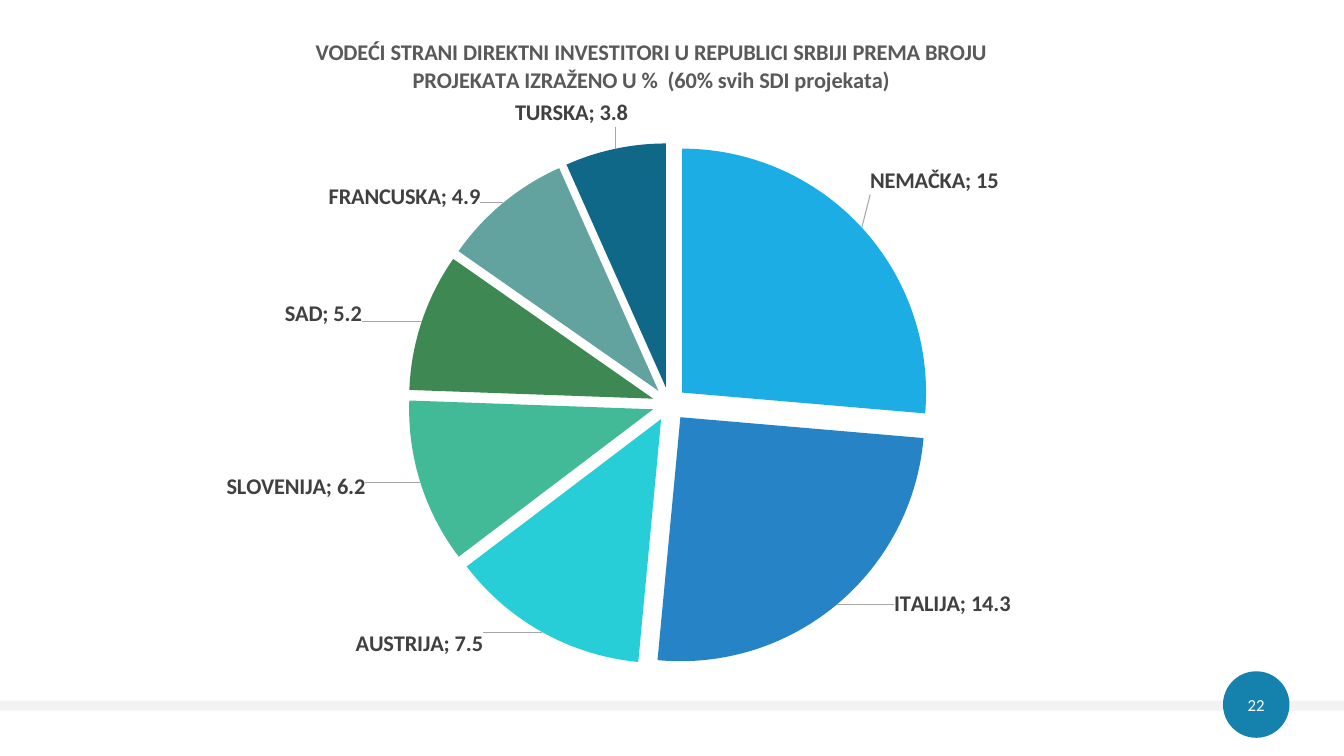
from dataclasses import dataclass

from pptx import Presentation
from pptx.chart.chart import Chart
from pptx.chart.data import CategoryChartData
from pptx.dml.color import RGBColor
from pptx.enum.chart import XL_CHART_TYPE, XL_LABEL_POSITION
from pptx.enum.shapes import MSO_SHAPE
from pptx.enum.text import MSO_ANCHOR, PP_ALIGN
from pptx.oxml import parse_xml
from pptx.oxml.ns import nsdecls, qn
from pptx.util import Inches, Pt


@dataclass(frozen=True)
class Theme:
    font: str = "Calibri"
    band: str = "F2F2F2"
    badge: str = "1482AC"
    white: str = "FFFFFF"
    title: str = "595959"
    label: str = "404040"
    leader: str = "A6A6A6"
    chart_size: int = 16
    number_size: int = 12


@dataclass(frozen=True)
class Box:
    left: float
    top: float
    width: float
    height: float

    def emu(self) -> tuple:
        return tuple(Inches(v) for v in (self.left, self.top, self.width, self.height))


@dataclass(frozen=True)
class Investor:
    """A slice; dx and dy shift its label from the rim, in inches."""
    name: str
    share: float
    color: str
    dx: float
    dy: float


THEME = Theme()
CHART = Box(1.87, 0.14, 9.18, 6.81)
PIE = Box(4.05, 1.41, 5.18, 5.2)
EXPLOSION = 7
TITLE = ("VODEĆI STRANI DIREKTNI INVESTITORI U REPUBLICI SRBIJI PREMA BROJU "
         "PROJEKATA IZRAŽENO U %  (60% svih SDI projekata)")
INVESTORS = [
    Investor("NEMAČKA", 15, "1CADE4", 0.04, -0.29),
    Investor("ITALIJA", 14.3, "2683C6", 0.53, -0.18),
    Investor("AUSTRIJA", 7.5, "27CED7", -0.56, -0.07),
    Investor("SLOVENIJA", 6.2, "42BA97", -0.49, -0.11),
    Investor("SAD", 5.2, "3E8853", -0.54, 0.08),
    Investor("FRANCUSKA", 4.9, "62A39F", -0.19, 0.12),
    Investor("TURSKA", 3.8, "106889", 0.14, -0.16),
]


def style_font(font, size: int, color: str, bold: bool = False) -> None:
    font.name, font.size, font.bold = THEME.font, Pt(size), bold
    font.color.rgb = RGBColor.from_string(color)


def add_filled(s, kind: MSO_SHAPE, box: Box, color: str):
    sp = s.shapes.add_shape(kind, *box.emu())
    sp.shadow.inherit = False
    sp.fill.solid()
    sp.fill.fore_color.rgb = RGBColor.from_string(color)
    sp.line.fill.background()
    return sp


def add_badge(s, number: str) -> None:
    sp = add_filled(s, MSO_SHAPE.OVAL, Box(12.13, 6.66, 0.66, 0.66), THEME.badge)
    tf = sp.text_frame
    tf.margin_left = tf.margin_right = tf.margin_top = tf.margin_bottom = 0
    tf.vertical_anchor = MSO_ANCHOR.MIDDLE
    p = tf.paragraphs[0]
    p.text = number
    p.alignment = PP_ALIGN.CENTER
    style_font(p.runs[0].font, THEME.number_size, THEME.white)


def chart_xml(tag: str, body: str = "", attributes: str = ""):
    return parse_xml(f"<c:{tag} {nsdecls('c', 'a')} {attributes}>{body}</c:{tag}>")


def layout_xml(settings: dict):
    items = "".join(f'<c:{name} val="{value}"/>' for name, value in settings.items())
    return chart_xml("layout", f"<c:manualLayout>{items}</c:manualLayout>")


def place_pie(chart: Chart) -> None:
    plot_area = chart._chartSpace.find(f".//{qn('c:plotArea')}")
    for old in plot_area.findall(qn("c:layout")):
        plot_area.remove(old)
    plot_area.insert(0, layout_xml({
        "layoutTarget": "inner", "xMode": "edge", "yMode": "edge",
        "x": (PIE.left - CHART.left) / CHART.width,
        "y": (PIE.top - CHART.top) / CHART.height,
        "w": PIE.width / CHART.width,
        "h": PIE.height / CHART.height}))


def add_separator(labels) -> None:
    labels.find(qn("c:showBubbleSize")).addnext(chart_xml("separator", "; "))


def style_labels(chart: Chart) -> None:
    series = chart.plots[0].series[0]
    labels = series.data_labels
    labels.show_value = labels.show_category_name = True
    points = [series.points[i].data_label for i in range(len(INVESTORS))]
    for label in [labels, *points]:
        label.position = XL_LABEL_POSITION.OUTSIDE_END
        style_font(label.font, THEME.chart_size, THEME.label, True)

    group = chart._chartSpace.find(f".//{qn('c:ser')}/{qn('c:dLbls')}")
    for item, investor in zip(group.findall(qn("c:dLbl")), INVESTORS):
        item.find(qn("c:idx")).addnext(layout_xml({
            "x": investor.dx / CHART.width, "y": investor.dy / CHART.height}))
        item.find(qn("c:showCatName")).set("val", "1")
        add_separator(item)
    add_separator(group)
    for old in group.findall(qn("c:showLeaderLines")):
        group.remove(old)
    group.append(chart_xml("showLeaderLines", attributes='val="1"'))
    group.append(chart_xml(
        "leaderLines", '<c:spPr><a:ln w="9525"><a:solidFill>'
        f'<a:srgbClr val="{THEME.leader}"/></a:solidFill></a:ln></c:spPr>'))


def add_investor_pie(s) -> None:
    data = CategoryChartData()
    data.categories = [i.name for i in INVESTORS]
    data.add_series("Series 1", [i.share for i in INVESTORS])
    chart = s.shapes.add_chart(XL_CHART_TYPE.PIE, *CHART.emu(), data).chart
    chart.has_legend = False
    chart.font.name, chart.font.size = THEME.font, Pt(10)
    chart.has_title = True
    p = chart.chart_title.text_frame.paragraphs[0]
    p.text = TITLE
    style_font(p.runs[0].font, THEME.chart_size, THEME.title, True)
    chart.chart_title.include_in_layout = False

    plot = chart.plots[0]
    plot.vary_by_categories = True
    chart._chartSpace.find(f".//{qn('c:ser')}/{qn('c:tx')}").addnext(
        chart_xml("explosion", attributes=f'val="{EXPLOSION}"'))
    for i, investor in enumerate(INVESTORS):
        fill = plot.series[0].points[i].format.fill
        fill.solid()
        fill.fore_color.rgb = RGBColor.from_string(investor.color)
    style_labels(chart)
    place_pie(chart)


def main() -> None:
    prs = Presentation()
    prs.slide_width, prs.slide_height = Inches(13.33), Inches(7.5)
    s = prs.slides.add_slide(prs.slide_layouts[6])
    add_filled(s, MSO_SHAPE.RECTANGLE, Box(0, 6.95, 13.33, 0.1), THEME.band)
    add_badge(s, "22")
    add_investor_pie(s)
    prs.save("out.pptx")


if __name__ == "__main__":
    main()
